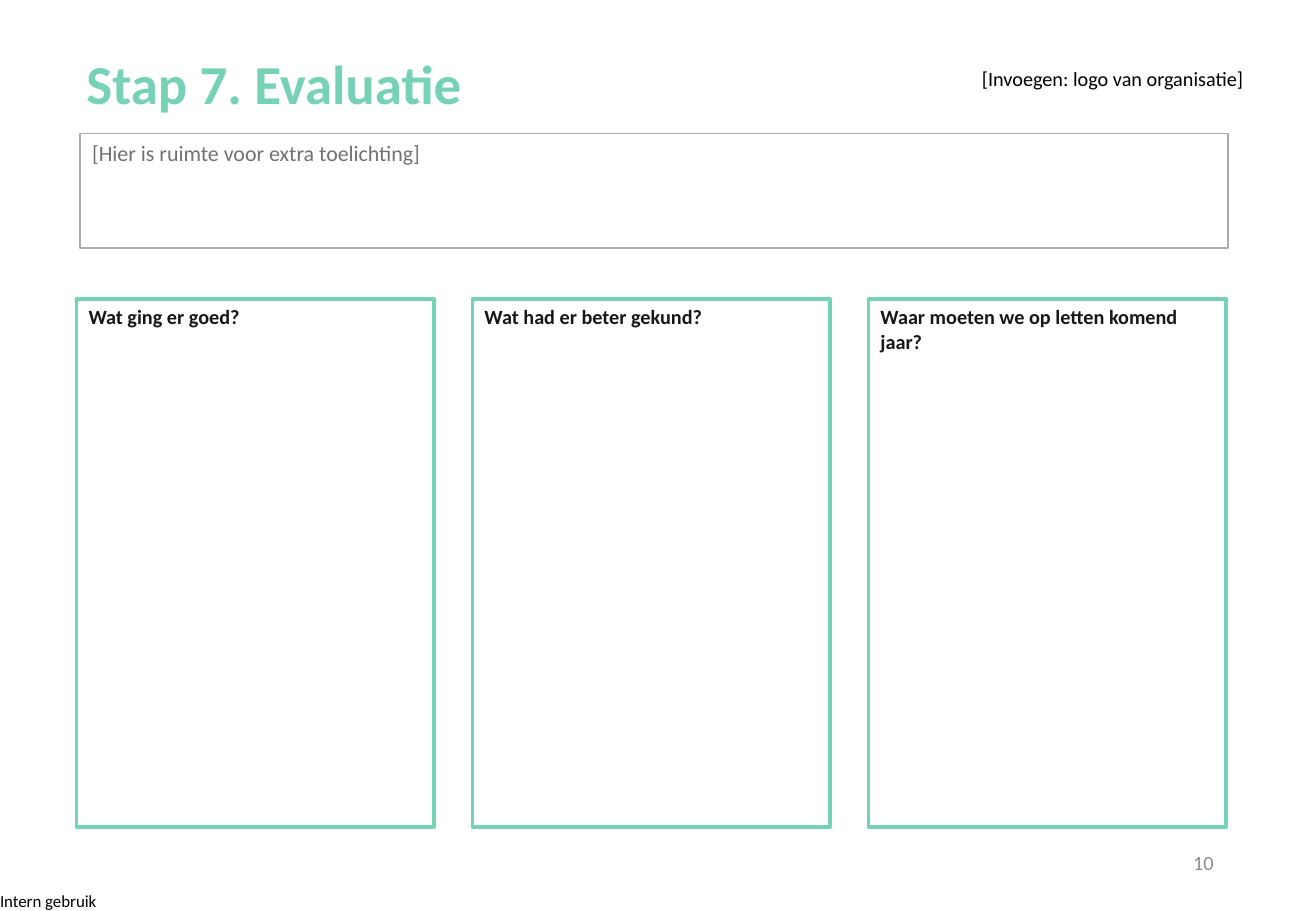
"""Build the evaluation slide with three question boxes."""
from pptx import Presentation
from pptx.dml.color import RGBColor
from pptx.enum.shapes import MSO_SHAPE as Shape
from pptx.enum.text import MSO_ANCHOR as Anchor, PP_ALIGN as Align
from pptx.util import Pt

MINT = "76D2B6"
WHITE = "FFFFFF"
ASKS = [
    "Wat ging er goed?",
    "Wat had er beter gekund?",
    "Waar moeten we op letten komend jaar?",
]


def paint(target, color):
    target.rgb = RGBColor.from_string(color)


def write(shape, text, size, color, bold=False, align=Align.LEFT,
          anchor=Anchor.TOP, pad=(7.2, 3.6)):
    frame = shape.text_frame
    frame.word_wrap = True
    frame.vertical_anchor = anchor
    frame.margin_left = frame.margin_right = Pt(pad[0])
    frame.margin_top = frame.margin_bottom = Pt(pad[1])
    frame.text = text
    para = frame.paragraphs[0]
    para.alignment = align
    font = para.runs[0].font
    font.name = "Calibri"
    font.size = Pt(size)
    font.bold = bold
    paint(font.color, color)
    return para


def add_label(slide, box, text, size, color, **style):
    shape = slide.shapes.add_textbox(*map(Pt, box))
    return write(shape, text, size, color, **style)


def add_box(slide, box, text, size, color, fill=None, edge=None, width=1,
            **style):
    shape = slide.shapes.add_shape(Shape.RECTANGLE, *map(Pt, box))
    shape.shadow.inherit = False
    if fill:
        shape.fill.solid()
        paint(shape.fill.fore_color, fill)
    else:
        shape.fill.background()
    if edge:
        paint(shape.line.color, edge)
        shape.line.width = Pt(width)
    else:
        shape.line.fill.background()
    write(shape, text, size, color, **style)


def main():
    deck = Presentation()
    deck.slide_width, deck.slide_height = Pt(780), Pt(540)
    slide = deck.slides.add_slide(deck.slide_layouts[6])

    add_label(slide, (0, 528, 60, 12), "Intern gebruik", 10, "000000",
              pad=(0, 0))
    title = add_label(slide, (45.4, 0, 726.5, 72), "Stap 7. Evaluatie", 32.5,
                      MINT, bold=True, anchor=Anchor.BOTTOM, pad=(5.8, 2.9))
    title.line_spacing = 0.9

    for col, ask in enumerate(ASKS):
        add_box(slide, (45.4 + col * 234.7, 177.1, 211.7, 313.2), ask, 12,
                "181717", edge=MINT, width=2.25, bold=True)

    add_label(slide, (550.8, 496.8, 175.7, 28.8), "10", 12, "8C8C8C",
              align=Align.RIGHT, anchor=Anchor.MIDDLE)
    add_box(slide, (47.5, 79.2, 680.4, 67.7),
            "[Hier is ruimte voor extra toelichting]", 13, "767171",
            fill=WHITE, edge="AFABAB")
    add_box(slide, (571.7, 20.9, 175.7, 51.1),
            "[Invoegen: logo van organisatie]", 12, "000000", fill=WHITE,
            align=Align.CENTER, anchor=Anchor.MIDDLE)

    deck.save("out.pptx")


if __name__ == "__main__":
    main()
